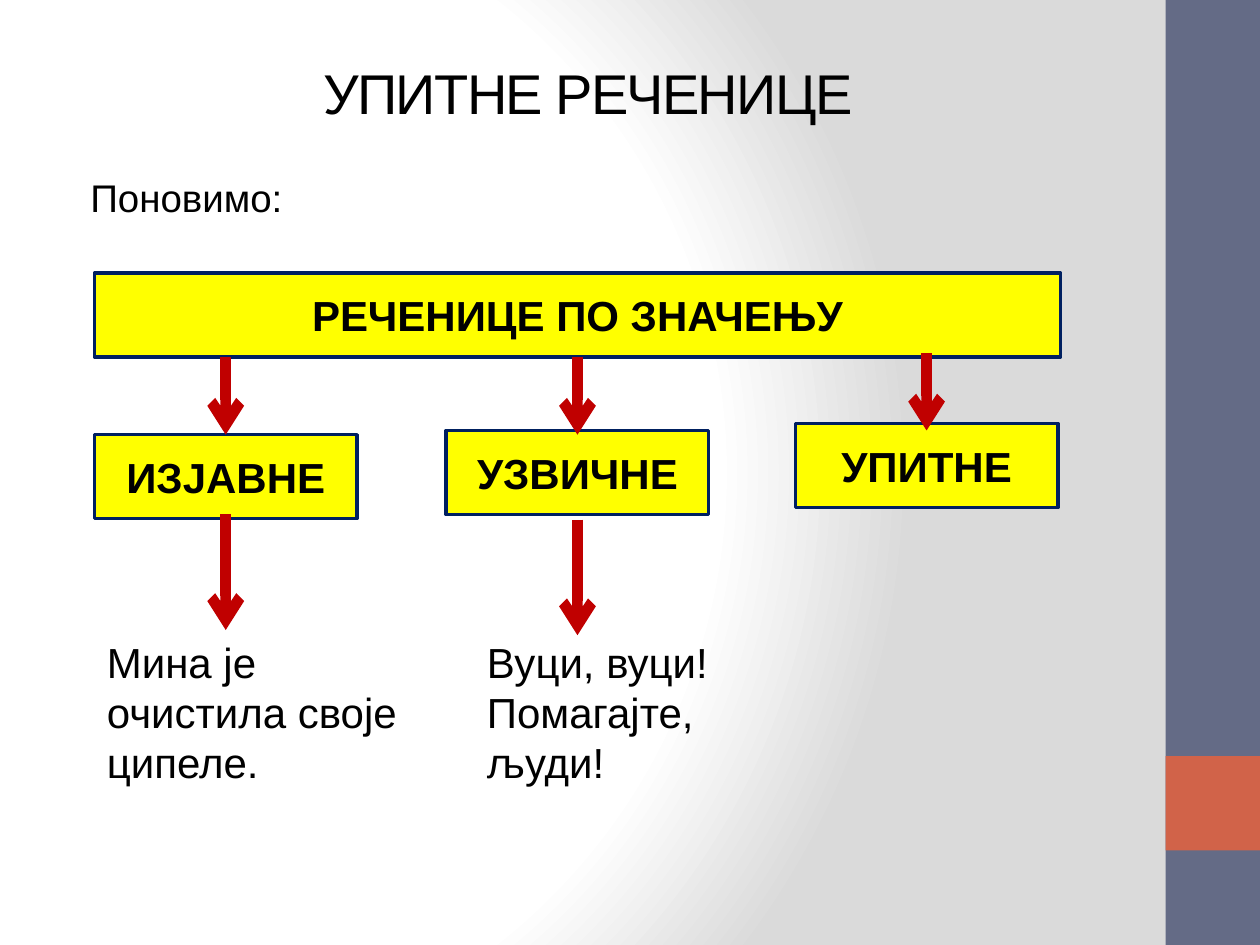
import dataclasses

import pptx
import pptx.dml.color
import pptx.enum.shapes
import pptx.enum.text
import pptx.oxml
import pptx.oxml.ns
import pptx.util

Pt = pptx.util.Pt
qn = pptx.oxml.ns.qn
Shape = pptx.enum.shapes.MSO_SHAPE
Align = pptx.enum.text.PP_ALIGN
Anchor = pptx.enum.text.MSO_ANCHOR


@dataclasses.dataclass(frozen=True)
class Theme:
    font: str = "Arial"
    ink: str = "000000"
    fill: str = "FFFF00"
    edge: str = "002060"
    arrow: str = "C00000"
    band: str = "646B86"
    mark: str = "D16349"
    light: str = "FFFFFF"
    shade: str = "DADADA"
    title: int = 32
    lead: int = 22
    body: int = 24


T = Theme()


def rgb(code):
    return pptx.dml.color.RGBColor.from_string(code)


def write(frame, text, size=T.body, bold=False, align=Align.LEFT,
          anchor=Anchor.TOP, indent=0, track=0):
    """Fill a text frame, one paragraph for each line of text."""
    frame.word_wrap = True
    frame.vertical_anchor = anchor
    for n, line in enumerate(text.split("\n")):
        para = frame.paragraphs[0] if n == 0 else frame.add_paragraph()
        para.alignment = align
        if indent:
            para._p.get_or_add_pPr().set("marL", str(Pt(indent)))
        run = para.add_run()
        run.text = line
        run.font.name = T.font
        run.font.size = Pt(size)
        run.font.bold = bold
        run.font.color.rgb = rgb(T.ink)
        if track:
            run._r.get_or_add_rPr().set("spc", str(track * 100))


def label(slide, text, x, y, w, h, **form):
    box = slide.shapes.add_textbox(Pt(x), Pt(y), Pt(w), Pt(h))
    write(box.text_frame, text, **form)


def block(slide, x, y, w, h, fill):
    box = slide.shapes.add_shape(Shape.RECTANGLE, Pt(x), Pt(y), Pt(w), Pt(h))
    box.shadow.inherit = False
    box.fill.solid()
    box.fill.fore_color.rgb = rgb(fill)
    box.line.fill.background()
    return box


def card(slide, text, x, y, w, h=48):
    box = block(slide, x, y, w, h, T.fill)
    box.line.color.rgb = rgb(T.edge)
    box.line.width = Pt(2)
    write(box.text_frame, text, bold=True, align=Align.CENTER,
          anchor=Anchor.MIDDLE)
    return box


def arrow(slide, x, top, end, start=None, goal=None):
    """Draw a downward arrow, joined to the start and goal boxes if given."""
    line = slide.shapes.add_connector(
        pptx.enum.shapes.MSO_CONNECTOR.STRAIGHT, Pt(x), Pt(top), Pt(x), Pt(end))
    if start:
        line.begin_connect(start, 2)
    if goal:
        line.end_connect(goal, 0)
    line.line.color.rgb = rgb(T.arrow)
    line.line.width = Pt(6)
    props = line._element.spPr
    head = pptx.oxml.ns.nsdecls("a")
    props.find(qn("a:ln")).append(
        pptx.oxml.parse_xml(f'<a:tailEnd {head} type="arrow"/>'))
    props.append(pptx.oxml.parse_xml(f"<a:effectLst {head}/>"))


def backdrop(slide):
    """Set a round gradient centred left of the middle."""
    slide.background.fill.gradient()
    old = next(slide.element.iter(qn("a:gradFill")))
    stops = "".join(
        f'<a:gs pos="{pos * 1000}"><a:srgbClr val="{code}"/></a:gs>'
        for pos, code in ((0, T.light), (75, T.light), (100, T.shade)))
    new = pptx.oxml.parse_xml(
        f'<a:gradFill {pptx.oxml.ns.nsdecls("a")} rotWithShape="1">'
        f'<a:gsLst>{stops}</a:gsLst><a:path path="circle">'
        '<a:fillToRect l="20000" t="50000" r="100000" b="50000"/>'
        '</a:path></a:gradFill>')
    old.getparent().replace(old, new)


def main():
    deck = pptx.Presentation()
    deck.slide_width, deck.slide_height = Pt(720), Pt(540)
    slide = deck.slides.add_slide(deck.slide_layouts[6])

    # Background and side band
    backdrop(slide)
    block(slide, 666, 0, 54, 540, T.band)
    block(slide, 666, 432, 54, 54, T.mark)

    # Headings
    label(slide, "УПИТНЕ РЕЧЕНИЦЕ", 36, 21.6, 600, 62.6, size=T.title,
          align=Align.CENTER, anchor=Anchor.MIDDLE, track=-1)
    label(slide, "Поновимо:", 36, 96, 600, 36, size=T.lead, indent=8.6)

    # Sentence types
    root = card(slide, "РЕЧЕНИЦЕ ПО ЗНАЧЕЊУ", 54, 156, 552)
    kinds = (("ИЗЈАВНЕ", 54, 248.4), ("УЗВИЧНЕ", 255, 246),
             ("УПИТНЕ", 454.5, 242))
    first, *rest = [card(slide, text, x, y, 150) for text, x, y in kinds]

    # Arrows to the types
    arrow(slide, 129, 204, 248.4, goal=first)
    arrow(slide, 330, 204, 248.4, start=root)
    arrow(slide, 529.5, 201.6, 246)

    # Examples
    samples = (("Мина је очистила своје ципеле.", 54, 129, 294),
               ("Вуци, вуци!\nПомагајте, људи!", 271.2, 330, 297))
    for text, x, mid, top in samples:
        label(slide, text, x, 360, 180, 94.5)
        arrow(slide, mid, top, top + 66)

    deck.save("out.pptx")


if __name__ == "__main__":
    main()
